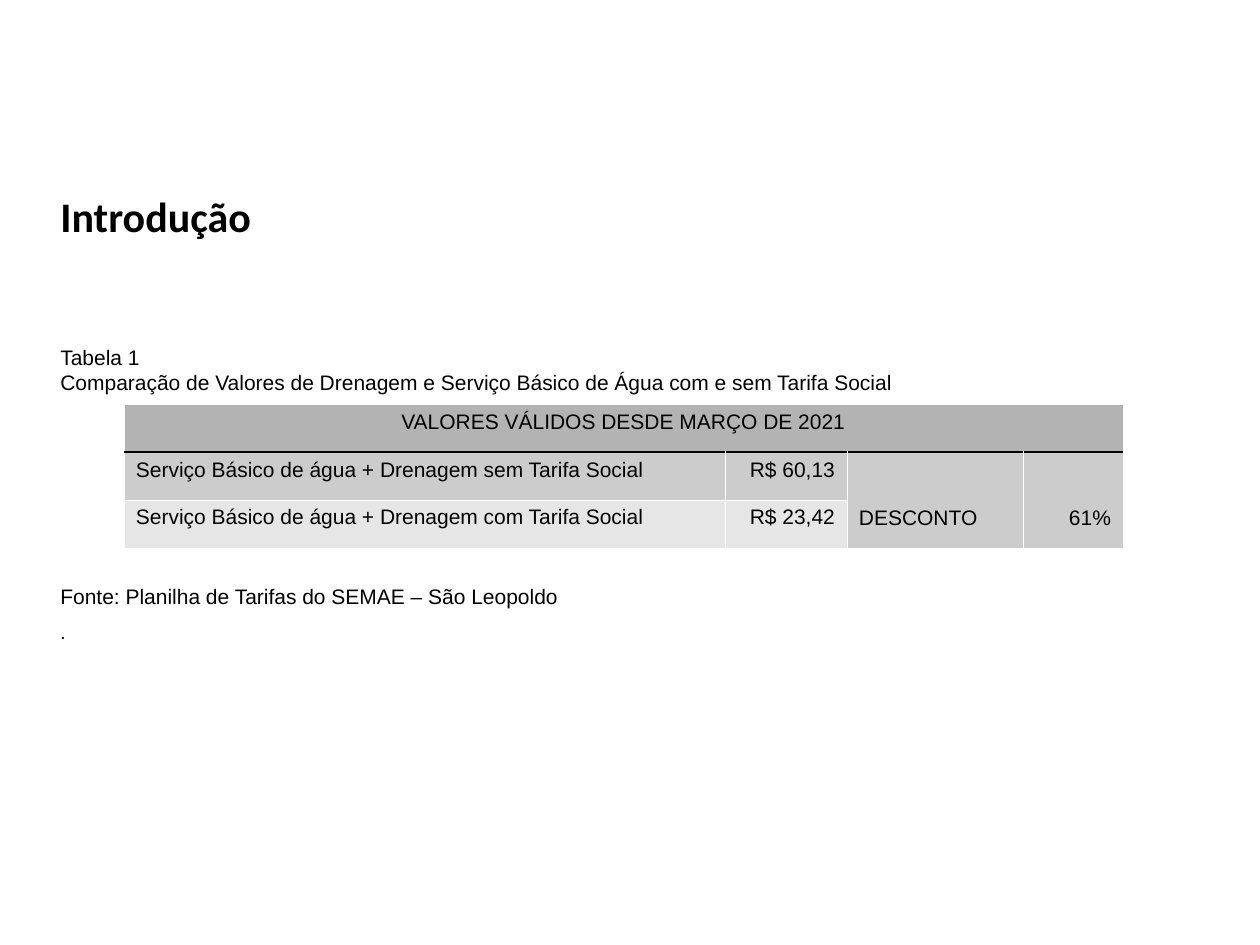
from dataclasses import dataclass

import lxml.etree
import pptx
import pptx.dml.color
import pptx.enum.text
import pptx.oxml.ns
import pptx.util

PIXEL = 914400 // 126
Align = pptx.enum.text.PP_ALIGN


@dataclass(frozen=True)
class Theme:
    heading_font: str = "Calibri"
    body_font: str = "Arial"
    heading_size: int = 24
    body_size: int = 12
    small_size: int = 11
    text: str = "000000"
    header_fill: str = "B3B3B3"
    dark_fill: str = "CCCCCC"
    light_fill: str = "E6E6E6"
    grid: str = "FFFFFF"
    grid_width: float = 0.06
    rule: str = "000000"
    rule_width: float = 1


THEME = Theme()


@dataclass(frozen=True)
class Line:
    text: str
    size: int = THEME.body_size
    font: str = THEME.body_font
    bold: bool = False
    align: Align = Align.JUSTIFY
    space_before: float = 0
    line_spacing: float = 1.0


@dataclass(frozen=True)
class Cell:
    row: int
    column: int
    text: str
    fill: str
    align: Align = Align.LEFT
    row_span: int = 1
    column_span: int = 1


LINES = [
    Line("Introdução", THEME.heading_size, THEME.heading_font, True, Align.LEFT,
         line_spacing=0.9),
    Line("Tabela 1", space_before=58.6),
    Line("Comparação de Valores de Drenagem e Serviço Básico de Água "
         "com e sem Tarifa Social"),
    Line("Fonte: Planilha de Tarifas do SEMAE – São Leopoldo", space_before=107.8),
    Line(".", THEME.small_size, line_spacing=1.5),
]

COLUMN_WIDTHS = [601, 122, 176, 100]
ROW_COUNT = 3
ROW_HEIGHT = 48
CELL_INSET_X = 12
CELL_INSET_Y = 6

CELLS = [
    Cell(0, 0, "VALORES VÁLIDOS DESDE MARÇO DE 2021", THEME.header_fill,
         Align.CENTER, column_span=4),
    Cell(1, 0, "Serviço Básico de água + Drenagem sem Tarifa Social", THEME.dark_fill),
    Cell(1, 1, "R$ 60,13", THEME.dark_fill, Align.RIGHT),
    Cell(1, 2, "DESCONTO", THEME.dark_fill, row_span=2),
    Cell(1, 3, "61%", THEME.dark_fill, Align.RIGHT, row_span=2),
    Cell(2, 0, "Serviço Básico de água + Drenagem com Tarifa Social", THEME.light_fill),
    Cell(2, 1, "R$ 23,42", THEME.light_fill, Align.RIGHT),
]


def px(length: int) -> int:
    return pptx.util.Emu(length * PIXEL)


def set_attributes(target: object, values: dict) -> None:
    for name, value in values.items():
        setattr(target, name, value)


def write_line(paragraph, line: Line) -> None:
    set_attributes(paragraph, {
        "alignment": line.align,
        "line_spacing": line.line_spacing,
        "space_before": pptx.util.Pt(line.space_before),
    })
    run = paragraph.add_run()
    run.text = line.text
    set_attributes(run.font, {
        "name": line.font,
        "size": pptx.util.Pt(line.size),
        "bold": line.bold,
    })
    run.font.color.rgb = pptx.dml.color.RGBColor.from_string(THEME.text)


def add_text(slide, left: int, top: int, width: int, height: int,
             lines: list[Line]) -> None:
    frame = slide.shapes.add_textbox(px(left), px(top), px(width), px(height)).text_frame
    frame.word_wrap = True
    for index, line in enumerate(lines):
        write_line(frame.add_paragraph() if index else frame.paragraphs[0], line)


def add_border(cell, side: str, color: str, width: float) -> None:
    properties = cell._tc.get_or_add_tcPr()
    border = lxml.etree.SubElement(properties, pptx.oxml.ns.qn(f"a:ln{side}"),
                                   w=str(int(pptx.util.Pt(width))))
    fill = lxml.etree.SubElement(border, pptx.oxml.ns.qn("a:solidFill"))
    lxml.etree.SubElement(fill, pptx.oxml.ns.qn("a:srgbClr"), val=color)


def style_cell(cell, row: int, fill: str) -> None:
    """Draw the white grid, with a black rule between header and body."""
    ruled_side = {0: "B", 1: "T"}.get(row)
    for side in "LRTB":
        if side == ruled_side:
            add_border(cell, side, THEME.rule, THEME.rule_width)
        else:
            add_border(cell, side, THEME.grid, THEME.grid_width)
    cell.fill.solid()
    cell.fill.fore_color.rgb = pptx.dml.color.RGBColor.from_string(fill)


def add_rates_table(slide, left: int, top: int) -> None:
    table = slide.shapes.add_table(
        ROW_COUNT, len(COLUMN_WIDTHS), px(left), px(top),
        px(sum(COLUMN_WIDTHS)), px(ROW_COUNT * ROW_HEIGHT)).table
    set_attributes(table, {"first_row": False, "horz_banding": False})
    for column, width in zip(table.columns, COLUMN_WIDTHS):
        column.width = px(width)
    for row in table.rows:
        row.height = px(ROW_HEIGHT)
    for item in CELLS:
        last_row = item.row + item.row_span - 1
        last_column = item.column + item.column_span - 1
        for row in range(item.row, last_row + 1):
            for column in range(item.column, last_column + 1):
                style_cell(table.cell(row, column), row, item.fill)
        cell = table.cell(item.row, item.column)
        if (last_row, last_column) != (item.row, item.column):
            cell.merge(table.cell(last_row, last_column))
        # Text of a tall cell sits level with its last row.
        set_attributes(cell, {
            "margin_left": px(CELL_INSET_X),
            "margin_right": px(CELL_INSET_X),
            "margin_top": px(CELL_INSET_Y + (item.row_span - 1) * ROW_HEIGHT),
            "margin_bottom": px(CELL_INSET_Y),
        })
        write_line(cell.text_frame.paragraphs[0], Line(item.text, align=item.align))


def main() -> None:
    presentation = pptx.Presentation()
    set_attributes(presentation, {"slide_width": px(1260), "slide_height": px(945)})
    slide = presentation.slides.add_slide(presentation.slide_layouts[6])
    add_text(slide, 48, 190, 1071, 655, LINES)
    add_rates_table(slide, 124, 404)
    presentation.save("out.pptx")


if __name__ == "__main__":
    main()
